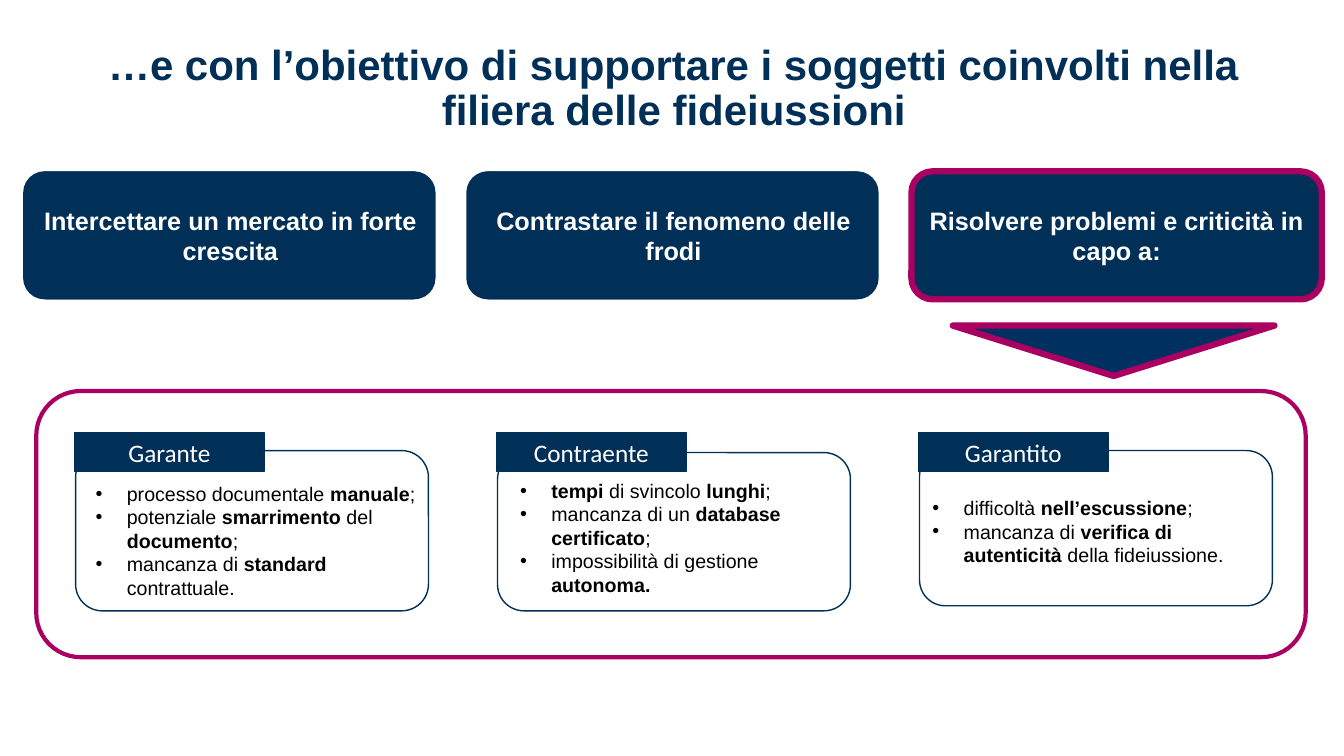
import pptx
import pptx.dml.color
import pptx.enum.shapes
import pptx.enum.text
import pptx.util
from lxml import etree

Inches = pptx.util.Inches
Pt = pptx.util.Pt
RGBColor = pptx.dml.color.RGBColor
Shape = pptx.enum.shapes.MSO_SHAPE
Align = pptx.enum.text.PP_ALIGN
Anchor = pptx.enum.text.MSO_ANCHOR

NAVY = RGBColor(0x00, 0x30, 0x57)
DEEP = RGBColor(0x00, 0x30, 0x60)
PLUM = RGBColor(0xAA, 0x00, 0x61)
WHITE = RGBColor(0xFF, 0xFF, 0xFF)
BLACK = RGBColor(0x00, 0x00, 0x00)

CARDS = [
    "Intercettare un mercato in forte crescita",
    "Contrastare il fenomeno delle frodi",
    "Risolvere problemi e criticità in capo a:",
]
# Heading, panel top and height, place of the list, items with bold parts between asterisks
PANELS = [
    ("Garante", 4.47, 1.59, (0.85, 4.73, 3.4, 1.28), [
        "processo documentale *manuale*;",
        "potenziale *smarrimento* del *documento*;",
        "mancanza di *standard* contrattuale."]),
    ("Contraente", 4.49, 1.57, (5.06, 4.7, 3.18, 1.28), [
        "*tempi* di svincolo *lunghi*;",
        "mancanza di un *database certificato*;",
        "impossibilità di gestione *autonoma.*"]),
    ("Garantito", 4.47, 1.54, (9.15, 4.87, 3.46, 0.81), [
        "difficoltà *nell’escussione*;",
        "mancanza di *verifica di autenticità* della fideiussione."]),
]


class Deck:
    def __init__(self, slide):
        self.slide = slide
        self.face = "Arial"

    def style(self, par, size, color, bold=None, face=None):
        par.font.name = face or self.face
        par.font.size = Pt(size)
        par.font.color.rgb = color
        par.font.bold = bold

    def shape(self, kind, place, fill=None, line=None, width=1):
        item = self.slide.shapes.add_shape(kind, *map(Inches, place))
        item.shadow.inherit = False
        if fill is None:
            item.fill.background()
        else:
            item.fill.solid()
            item.fill.fore_color.rgb = fill
        if line is None:
            item.line.fill.background()
        else:
            item.line.color.rgb = line
            item.line.width = Pt(width)
        return item

    def label(self, item, text, size, color, bold=None, face=None):
        """Write one centred paragraph into a shape or text box."""
        frame = item.text_frame
        frame.word_wrap = True
        frame.vertical_anchor = Anchor.MIDDLE
        par = frame.paragraphs[0]
        par.text = text
        par.alignment = Align.CENTER
        self.style(par, size, color, bold, face)
        return par

    def box(self, place):
        item = self.slide.shapes.add_textbox(*map(Inches, place))
        item.text_frame.word_wrap = True
        return item

    def title(self, text, place):
        par = self.label(self.box(place), text, 30, NAVY, True)
        par.line_spacing = 0.9

    def card(self, text, left, line):
        top, wide, high = 1.7, 4.07, 1.27
        item = self.shape(Shape.ROUNDED_RECTANGLE, (left, top, wide, high),
                          NAVY, line, 4.5)
        self.label(item, text, 18, WHITE, True)
        frame = item.text_frame
        frame.margin_top = frame.margin_bottom = Inches(0.1)

    def bullets(self, items, place):
        frame = self.box(place).text_frame
        for i, text in enumerate(items):
            par = frame.add_paragraph() if i else frame.paragraphs[0]
            self.bullet(par)
            self.style(par, 14, BLACK)
            for j, part in enumerate(text.split("*")):
                if part:
                    run = par.add_run()
                    run.text = part
                    if j % 2:
                        run.font.bold = True

    def bullet(self, par):
        props = par._p.get_or_add_pPr()
        props.set("marL", str(Inches(0.31)))
        props.set("indent", str(-Inches(0.31)))
        space = pptx.oxml.ns.qn
        etree.SubElement(props, space("a:buFont")).set("typeface", "Arial")
        etree.SubElement(props, space("a:buChar")).set("char", "•")


def main():
    show = pptx.Presentation()
    show.slide_width = Inches(13.33)
    show.slide_height = Inches(7.5)
    deck = Deck(show.slides.add_slide(show.slide_layouts[6]))

    for i, text in enumerate(CARDS):
        left = 0.25 + 4.395 * i
        deck.shape(Shape.ROUNDED_RECTANGLE, (left - 0.02, 1.7, 4.07, 1.27), NAVY)
        deck.card(text, left, PLUM if i == 2 else None)

    arrow = deck.shape(Shape.ISOSCELES_TRIANGLE, (9.45, 3.23, 3.19, 0.5),
                       DEEP, PLUM, 4.5)
    arrow.rotation = 180
    deck.shape(Shape.ROUNDED_RECTANGLE, (0.36, 3.88, 12.59, 2.64), None, PLUM, 3)

    for i, (head, top, high, place, items) in enumerate(PANELS):
        left = 0.75 + 4.185 * i
        deck.shape(Shape.ROUNDED_RECTANGLE, (left, top, 3.5, high), None, NAVY)
        tab = deck.shape(Shape.RECTANGLE, (left - 0.01, 4.29, 1.88, 0.39), NAVY, NAVY)
        deck.label(tab, head, 18, WHITE, face="Calibri")
        deck.bullets(items, place)

    deck.title("…e con l’obiettivo di supportare i soggetti coinvolti nella "
               "filiera delle fideiussioni", (0.39, 0.4, 12.59, 0.97))
    show.save("out.pptx")


if __name__ == "__main__":
    main()
